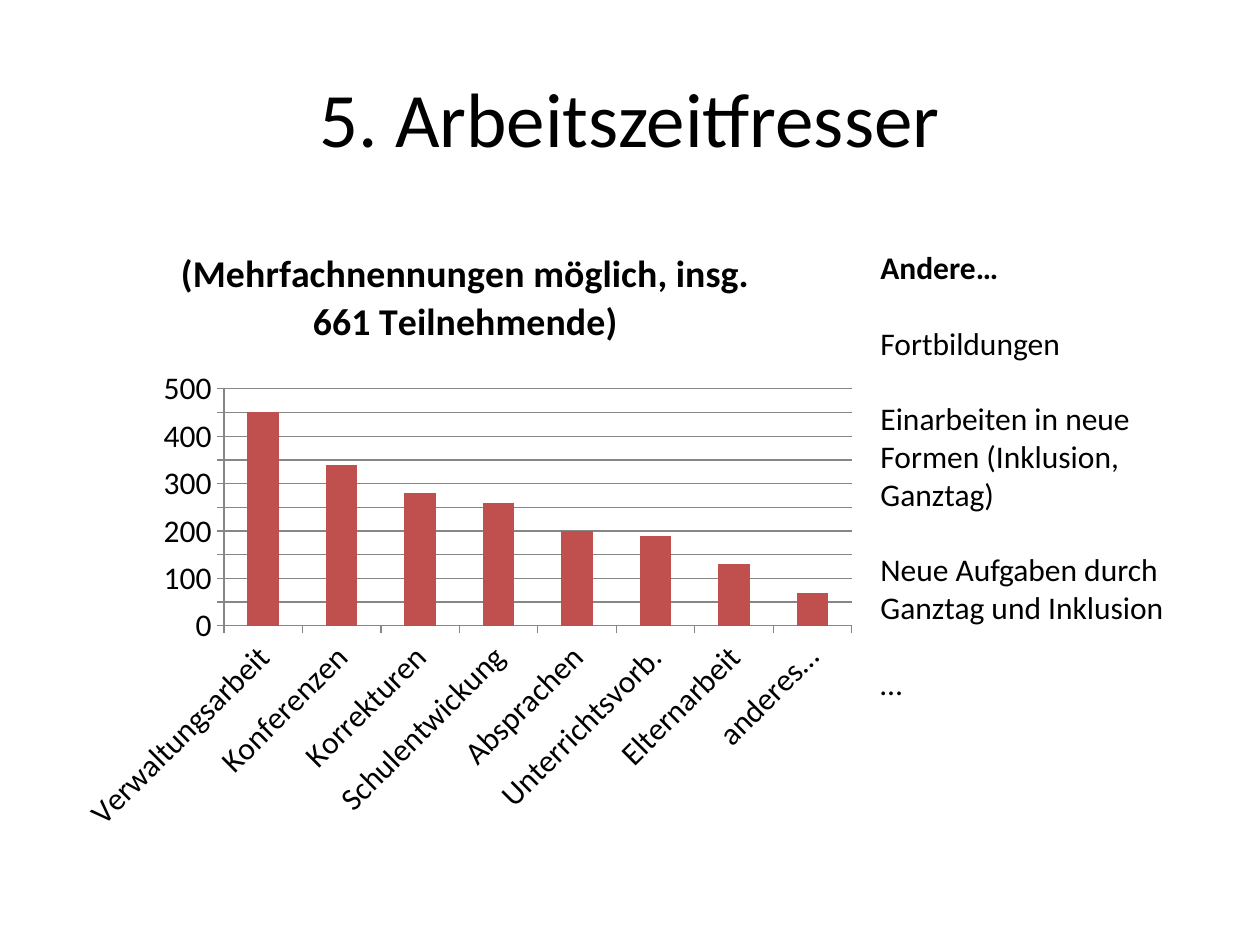
from lxml import etree
from pptx import Presentation
from pptx import util as u
from pptx.chart import data as chart_data
from pptx.dml import color as dml
from pptx.enum import chart as ch, text
from pptx.oxml import ns

Pt = u.Pt
FONT = "Calibri"
BLACK, GREY, RED = "000000", "868686", "C0504D"
CHART_TITLE = "(Mehrfachnennungen möglich, insg. 661 Teilnehmende)"
TIME_EATERS = {
    "Verwaltungsarbeit": 450,
    "Konferenzen": 340,
    "Korrekturen": 280,
    "Schulentwickung": 260,
    "Absprachen": 200,
    "Unterrichtsvorb.": 190,
    "Elternarbeit": 130,
    "anderes…": 70,
}
OTHERS = [
    "Andere…",
    "Fortbildungen",
    "Einarbeiten in neue Formen (Inklusion, Ganztag)",
    "Neue Aufgaben durch Ganztag und Inklusion",
    "…",
]


def rgb(value):
    return dml.RGBColor.from_string(value)


def style_font(font, size, bold=False):
    font.name, font.size, font.bold = FONT, Pt(size), bold
    font.color.rgb = rgb(BLACK)


def add_text(page, area, lines, size, gap=0, bold_first=False,
             align=text.PP_ALIGN.LEFT, anchor=text.MSO_ANCHOR.TOP):
    box = page.shapes.add_textbox(*map(Pt, area))
    frame = box.text_frame
    frame.word_wrap = True
    frame.vertical_anchor = anchor
    for index, line in enumerate(lines):
        para = frame.paragraphs[0] if index == 0 else frame.add_paragraph()
        para.alignment = align
        if index:
            para.space_before = Pt(gap)
        span = para.add_run()
        span.text = line
        style_font(span.font, size, bold_first and index == 0)


def place_plot(chart, **fractions):
    """Fix the inner plot area as fractions of the chart."""
    plot_area = chart.plots[0]._element.getparent()
    layout = plot_area.find(ns.qn("c:layout"))
    if layout is None:
        layout = etree.Element(ns.qn("c:layout"))
        plot_area.insert(0, layout)
    manual = etree.SubElement(layout, ns.qn("c:manualLayout"))
    settings = dict(layoutTarget="inner", xMode="edge", yMode="edge", **fractions)
    for tag, value in settings.items():
        etree.SubElement(manual, ns.qn("c:" + tag)).set("val", str(value))


def add_bars(page, area):
    data = chart_data.CategoryChartData()
    data.categories = list(TIME_EATERS)
    data.add_series(CHART_TITLE, list(TIME_EATERS.values()))
    chart = page.shapes.add_chart(
        ch.XL_CHART_TYPE.COLUMN_CLUSTERED, *map(Pt, area), data).chart
    style_font(chart.font, 18)
    chart.has_legend = False

    # Heading of the chart
    chart.has_title = True
    para = chart.chart_title.text_frame.paragraphs[0]
    span = para.add_run()
    span.text = CHART_TITLE
    style_font(span.font, 21.6, bold=True)
    chart.chart_title.include_in_layout = False

    # Bars
    plot = chart.plots[0]
    plot.vary_by_categories = False
    plot.gap_width = 150
    fill = plot.series[0].format.fill
    fill.solid()
    fill.fore_color.rgb = rgb(RED)

    # Axes
    names, counts = chart.category_axis, chart.value_axis
    counts.minimum_scale, counts.maximum_scale, counts.major_unit = 0, 500, 50
    counts.has_major_gridlines = True
    for axis in (names, counts):
        axis.major_tick_mark = ch.XL_TICK_MARK.OUTSIDE
        style_font(axis.tick_labels.font, 18)
    for part in (names, counts, counts.major_gridlines):
        part.format.line.color.rgb = rgb(GREY)
        part.format.line.width = Pt(0.75)
    names._element.find(".//" + ns.qn("a:bodyPr")).set("rot", "-2700000")
    place_plot(chart, x=0.2, y=0.27, w=0.78, h=0.38)


def main():
    deck = Presentation()
    deck.slide_width, deck.slide_height = Pt(720), Pt(540)
    page = deck.slides.add_slide(deck.slide_layouts[6])

    # Title
    add_text(page, (36, 21.6, 648, 90), ["5. Arbeitszeitfresser"], 44,
             align=text.PP_ALIGN.CENTER, anchor=text.MSO_ANCHOR.MIDDLE)
    # Survey chart
    add_bars(page, (36, 126, 460, 356.4))
    # Other answers
    add_text(page, (496, 138.24, 181.5, 269.3), OTHERS, 18, gap=21.6,
             bold_first=True)
    deck.save("out.pptx")


if __name__ == "__main__":
    main()
